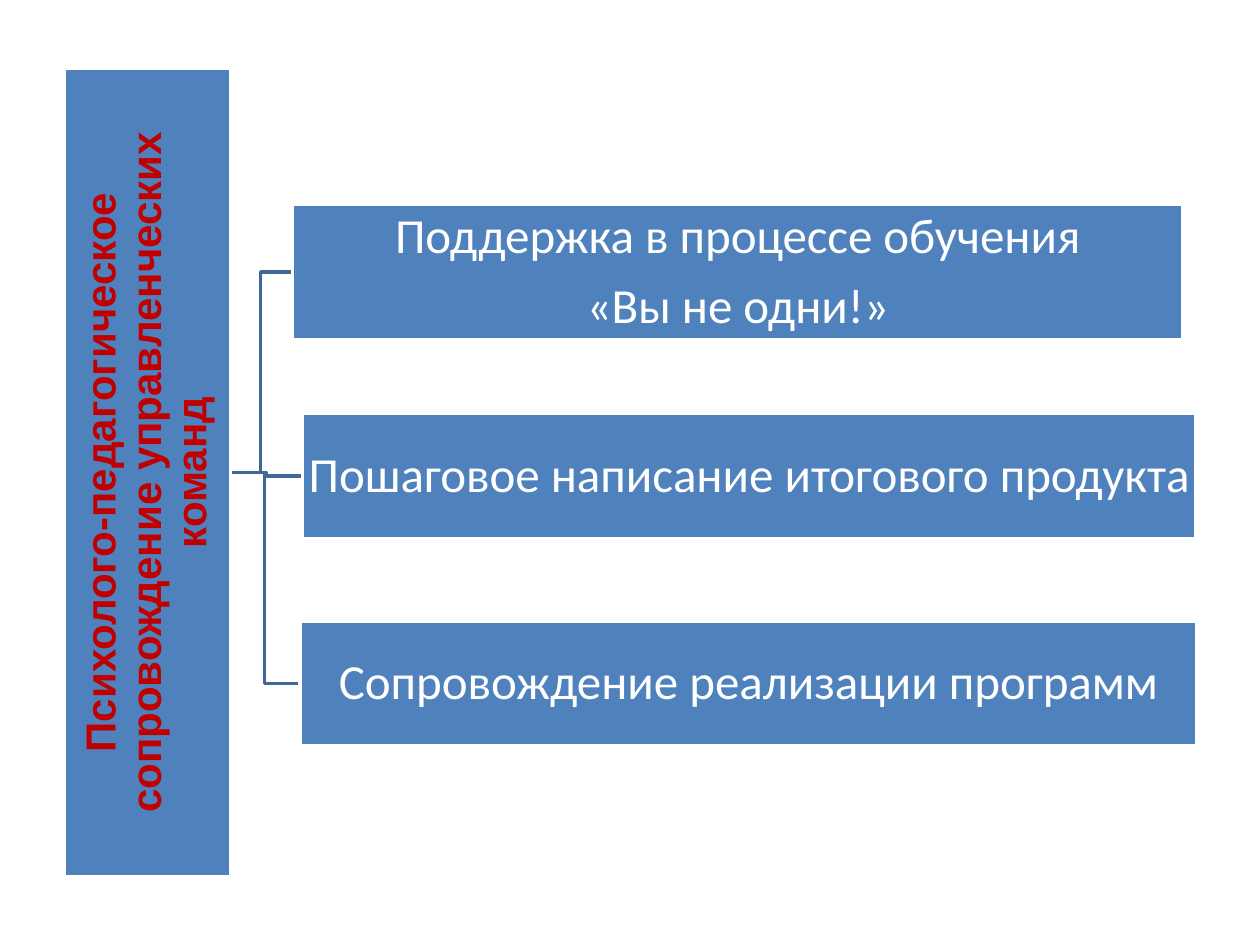
"""Build a slide with a vertical title bar branching to three support measures."""
import dataclasses

import pptx
import pptx.dml.color
import pptx.enum.shapes
import pptx.enum.text
import pptx.util

Inches = pptx.util.Inches
Pt = pptx.util.Pt


@dataclasses.dataclass(frozen=True)
class Theme:
    """Colours, fonts and sizes of the slide."""
    box: str = "4F81BD"
    edge: str = "FFFFFF"
    branch: str = "3F6797"
    title_color: str = "C00000"
    text_color: str = "FFFFFF"
    title_font: str = "Arial"
    text_font: str = "Calibri"
    title_size: int = 24
    text_size: int = 28
    line_width: int = 2
    line_spacing: float = 0.9
    space_after: float = 0.35
    inset: float = 0.02


class Diagram:
    """Draws boxes and branches on the current slide in one style."""

    def __init__(self, slide, theme):
        """Keep the slide and the theme."""
        self.slide = slide
        self.theme = theme

    def rgb(self, value):
        """Turn a hex string into a colour."""
        return pptx.dml.color.RGBColor.from_string(value)

    def outline(self, sp, color):
        """Set the line of a shape and drop its shadow."""
        sp.shadow.inherit = False
        sp.line.color.rgb = self.rgb(color)
        sp.line.width = Pt(self.theme.line_width)

    def branch(self, start, end):
        """Draw an elbow line that turns halfway between two points."""
        (x1, y1), (x2, y2) = start, end
        mid = (x1 + x2) / 2
        builder = self.slide.shapes.build_freeform(Inches(x1), Inches(y1))
        points = [(mid, y1), (mid, y2), (x2, y2)]
        builder.add_line_segments([(Inches(x), Inches(y)) for x, y in points], close=False)
        sp = builder.convert_to_shape()
        sp.fill.background()
        self.outline(sp, self.theme.branch)

    def box(self, bounds, lines, font, size, color, bold=False, rotation=0):
        """Draw a filled rectangle with centred lines of text."""
        sp = self.slide.shapes.add_shape(
            pptx.enum.shapes.MSO_SHAPE.RECTANGLE, *(Inches(v) for v in bounds))
        sp.rotation = rotation
        sp.fill.solid()
        sp.fill.fore_color.rgb = self.rgb(self.theme.box)
        self.outline(sp, self.theme.edge)
        tf = sp.text_frame
        tf.word_wrap = True
        tf.vertical_anchor = pptx.enum.text.MSO_ANCHOR.MIDDLE
        tf.margin_left = tf.margin_right = Inches(self.theme.inset)
        tf.margin_top = tf.margin_bottom = Inches(self.theme.inset)
        for i, line in enumerate(lines):
            p = tf.add_paragraph() if i else tf.paragraphs[0]
            p.alignment = pptx.enum.text.PP_ALIGN.CENTER
            p.line_spacing = self.theme.line_spacing
            p.space_after = Pt(size * self.theme.space_after)
            r = p.add_run()
            r.text = line
            r.font.name = font
            r.font.size = Pt(size)
            r.font.bold = bold
            r.font.color.rgb = self.rgb(color)

    def title_bar(self, bounds, text):
        """Draw the bar whose title reads upwards."""
        t = self.theme
        self.box(bounds, [text], t.title_font, t.title_size, t.title_color, True, 270)

    def measure(self, bounds, lines):
        """Draw one support measure."""
        t = self.theme
        self.box(bounds, lines, t.text_font, t.text_size, t.text_color)


def main():
    """Create and save the presentation."""
    prs = pptx.Presentation()
    prs.slide_width, prs.slide_height = Inches(10), Inches(7.5)
    s = prs.slides.add_slide(prs.slide_layouts[6])
    diagram = Diagram(s, Theme())
    root = (1.82, 3.75)
    measures = [
        ((2.32, 1.62, 7.07, 1.08), ["Поддержка в процессе обучения", "«Вы не одни!»"]),
        ((2.4, 3.28, 7.09, 1), ["Пошаговое написание итогового продукта"]),
        ((2.38, 4.93, 7.12, 0.99), ["Сопровождение реализации программ"]),
    ]
    for (left, top, _, height), _ in reversed(measures):
        diagram.branch(root, (left, top + height / 2))
    diagram.title_bar((-2.04, 3.09, 6.42, 1.32),
                      "Психолого-педагогическое сопровождение управленческих команд")
    for bounds, lines in measures:
        diagram.measure(bounds, lines)
    prs.save("out.pptx")


if __name__ == "__main__":
    main()
